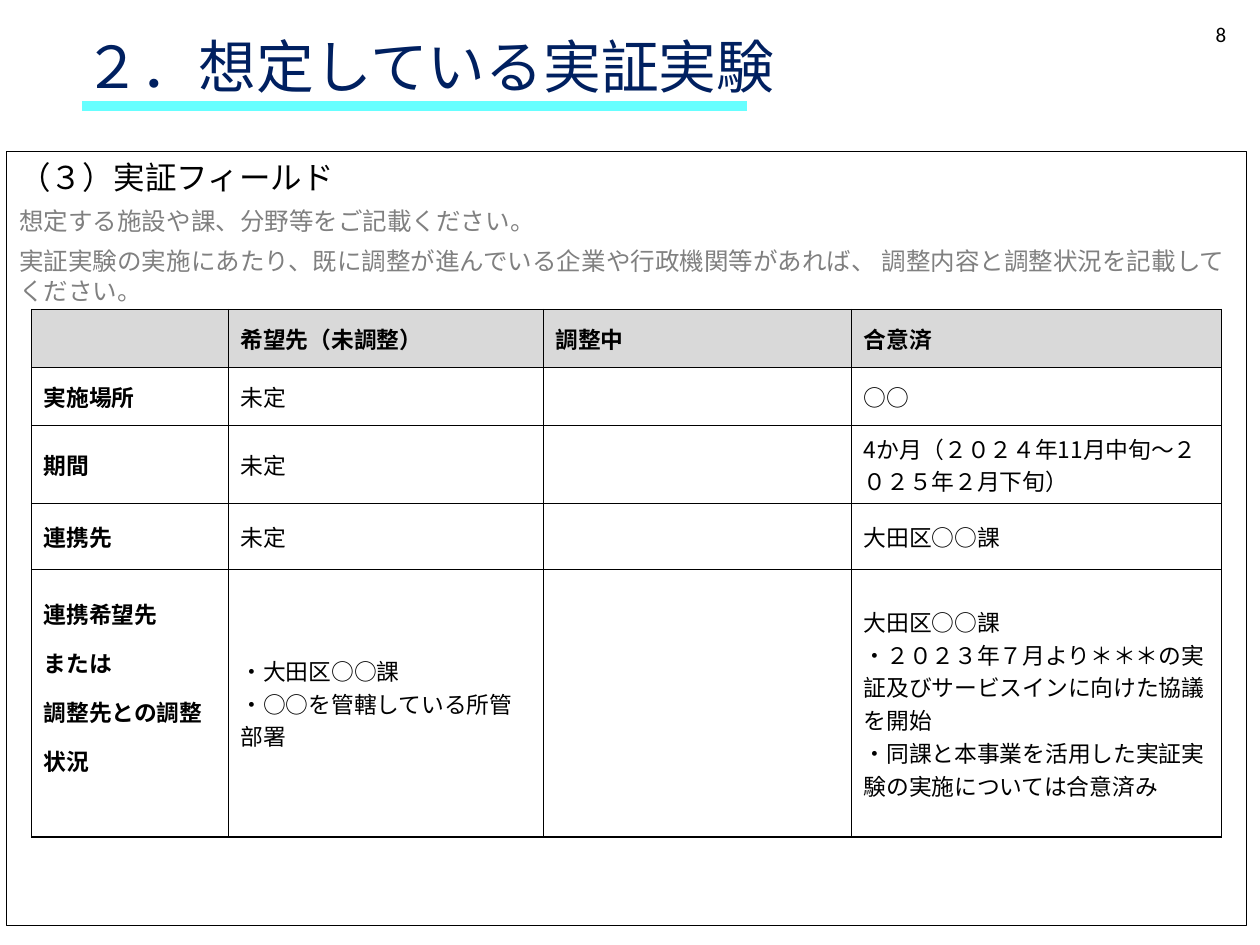
from pptx import Presentation
from pptx.dml.color import RGBColor
from pptx.enum.shapes import MSO_CONNECTOR as Line, MSO_SHAPE as Shape
from pptx.enum.text import MSO_ANCHOR as Anchor, MSO_AUTO_SIZE as Fit, PP_ALIGN as Align
from pptx.oxml import parse_xml
from pptx.oxml.ns import nsdecls, qn
from pptx.util import Pt

LATIN, CJK = "Calibri", "Noto Sans CJK JP"


def rgb(code):
    return RGBColor.from_string(code)


def style(para, size, color="000000", font=CJK, asian=CJK, bold=False):
    for run in para.runs:
        face = run.font
        face.size, face.name, face.bold = Pt(size), font, bold
        face.color.rgb = rgb(color)
        east = parse_xml(f'<a:ea {nsdecls("a")} typeface="{asian}"/>')
        face._element.find(qn("a:latin")).addnext(east)


prs = Presentation()
prs.slide_width, prs.slide_height = Pt(720), Pt(540)
slide = prs.slides.add_slide(prs.slide_layouts[5])
shapes = slide.shapes

# Title
title = shapes.title
title.left, title.top, title.width, title.height = Pt(40.3), Pt(18.7), Pt(620), Pt(60.5)
frame = title.text_frame
frame.text = "２．想定している実証実験"
frame.auto_size, frame.vertical_anchor = Fit.NONE, Anchor.TOP
para = frame.paragraphs[0]
para.alignment, para.line_spacing = Align.LEFT, 0.9
style(para, 33, "002060", LATIN, LATIN)

# Title underline
rule = shapes.add_connector(Line.STRAIGHT, Pt(46.8), Pt(60.5), Pt(427), Pt(60.5))
rule.line.color.rgb, rule.line.width = rgb("66FFFF"), Pt(6)
rule._element.spPr.append(parse_xml(f'<a:effectLst {nsdecls("a")}/>'))

# Page number
page = shapes.add_textbox(Pt(545.8), Pt(8.6), Pt(162), Pt(28.8))
frame = page.text_frame
frame.word_wrap, frame.vertical_anchor = True, Anchor.TOP
frame.text = "8"
frame.paragraphs[0].alignment = Align.RIGHT
style(frame.paragraphs[0], 12, font=LATIN, asian=LATIN)

# Framed section text
box = shapes.add_shape(Shape.RECTANGLE, Pt(3.9), Pt(86.7), Pt(708.5), Pt(442))
box.shadow.inherit = False
box.fill.background()
box.line.color.rgb, box.line.width = rgb("000000"), Pt(0.75)
frame = box.text_frame
frame.word_wrap, frame.vertical_anchor = True, Anchor.TOP
frame.text = "\n".join([
    "（３）実証フィールド",
    "想定する施設や課、分野等をご記載ください。",
    "実証実験の実施にあたり、既に調整が進んでいる企業や行政機関等があれば、 調整内容と調整状況を記載してください。",
])
for i, para in enumerate(frame.paragraphs):
    para.alignment, para.space_before = Align.LEFT, Pt(6)
    size, color = (14, "808080") if i else (18, "000000")
    style(para, size, color, asian=LATIN)

# Field table
rows = [
    ["", "希望先（未調整）", "調整中", "合意済"],
    ["実施場所", "未定", "", "○○"],
    ["期間", "未定", "", "4か月（２０２４年11月中旬～２０２５年２月下旬）"],
    ["連携先", "未定", "", "大田区○○課"],
    ["連携希望先\nまたは\n調整先との調整状況",
     "・大田区○○課\n・○○を管轄している所管部署",
     "",
     "大田区○○課\n・２０２３年７月より＊＊＊の実証及びサービスインに向けた協議を開始\n"
     "・同課と本事業を活用した実証実験の実施については合意済み"],
]
wides = [112.5, 180, 176.2, 211.5]
highs = [33.1, 33.1, 44.8, 37.7, 152.8]
grid = shapes.add_table(len(rows), len(wides), Pt(18), Pt(176.9),
                        Pt(sum(wides)), Pt(sum(highs))).table
grid.first_row = grid.horz_banding = False
for col, wide in zip(grid.columns, wides):
    col.width = Pt(wide)
for row, high in zip(grid.rows, highs):
    row.height = Pt(high)

for r, texts in enumerate(rows):
    for c, text in enumerate(texts):
        cell = grid.cell(r, c)
        cell.text = text
        cell.vertical_anchor = Anchor.MIDDLE
        cell.margin_left = cell.margin_right = Pt(7)
        cell.margin_top = cell.margin_bottom = Pt(3.4)
        tall = c == 0 and "\n" in text
        if tall:
            cell.margin_bottom = Pt(31.6)
        for para in cell.text_frame.paragraphs:
            if tall:
                para.line_spacing = 1.5
            style(para, 13, bold=r == 0 or c == 0)
        props = cell._tc.get_or_add_tcPr()
        for side in ("lnL", "lnR", "lnT", "lnB"):
            props.append(parse_xml(
                f'<a:{side} {nsdecls("a")} w="{Pt(1)}"><a:solidFill>'
                f'<a:srgbClr val="000000"/></a:solidFill></a:{side}>'))
        if r == 0:
            cell.fill.solid()
            cell.fill.fore_color.rgb = rgb("D9D9D9")
        else:
            cell.fill.background()

prs.save("out.pptx")
